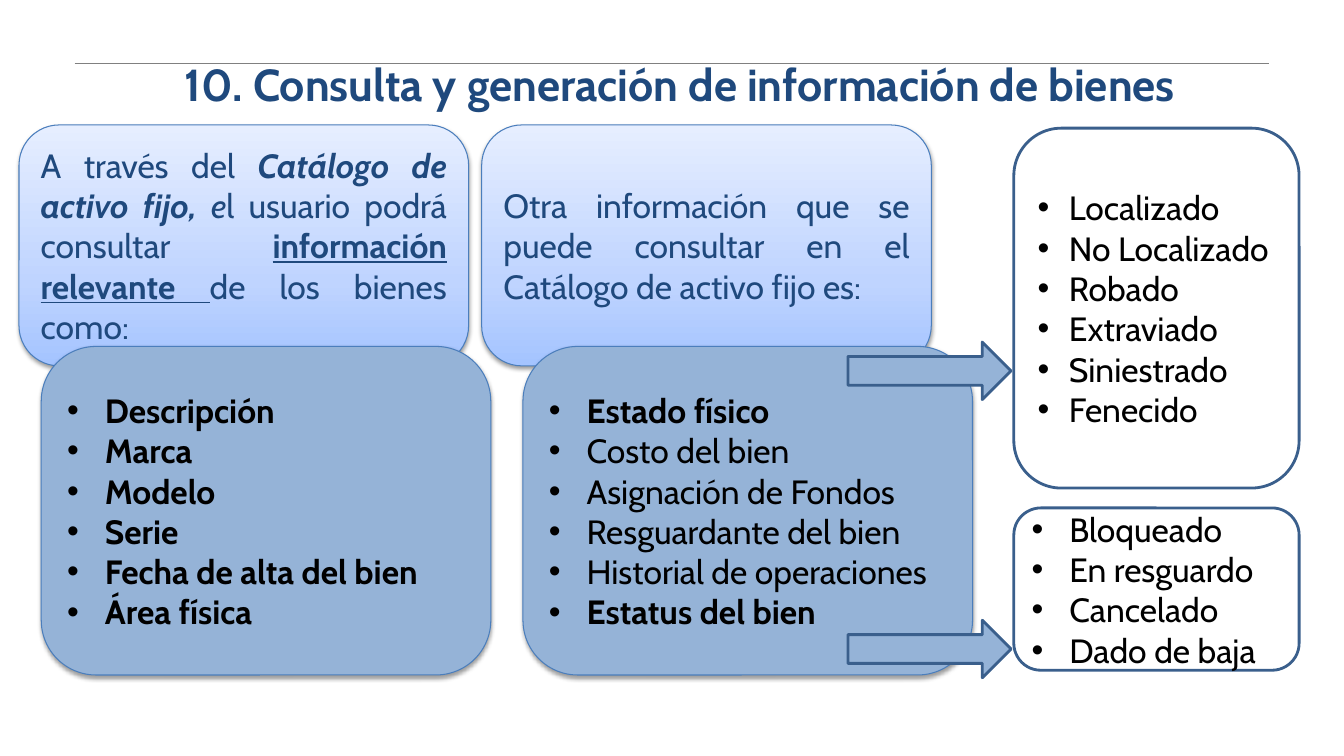
from copy import deepcopy

from pptx import Presentation
from pptx.dml.color import RGBColor
from pptx.enum.shapes import MSO_CONNECTOR, MSO_SHAPE
from pptx.enum.text import MSO_ANCHOR, PP_ALIGN
from pptx.oxml import parse_xml
from pptx.oxml.ns import nsdecls, qn
from pptx.oxml.xmlchemy import OxmlElement
from pptx.util import Cm, Pt

ROUND_RECT = MSO_SHAPE.ROUNDED_RECTANGLE
RIGHT_ARROW = MSO_SHAPE.RIGHT_ARROW
STRAIGHT = MSO_CONNECTOR.STRAIGHT
MIDDLE = MSO_ANCHOR.MIDDLE
LEFT, CENTER, JUSTIFY = PP_ALIGN.LEFT, PP_ALIGN.CENTER, PP_ALIGN.JUSTIFY

NAVY = RGBColor(0x1F, 0x49, 0x7D)
BLACK = RGBColor(0, 0, 0)
GRAY = RGBColor(0x80, 0x80, 0x80)
STEEL = RGBColor(0x95, 0xB3, 0xD7)
EDGE = RGBColor(0x4B, 0x7E, 0xBC)
DARK_EDGE = RGBColor(0x3A, 0x5F, 0x8C)
INTRO_STOPS = [(0, RGBColor(0xA4, 0xC4, 0xFF)),
               (0.35, RGBColor(0xBF, 0xD4, 0xFF)),
               (1, RGBColor(0xE6, 0xEE, 0xFF))]
FONT = "Cabin"

COLUMN_W = 11.33
INTRO_H = 6.07
LIST_H = 8.28
LIST_DROP = 5.58
STATUS_W = 7.19
ARROW_W, ARROW_H = 4.11, 1.45
ARROW_REACH = 4.18

INTRO_1 = [("A través del ", ""), ("Catálogo de activo fijo, ", "bi"), ("e", "i"),
           ("l usuario podrá consultar ", ""), ("información relevante ", "bu"),
           ("de los bienes como:", "")]
INTRO_2 = [("Otra información que se puede consultar en el Catálogo de activo fijo es:", "")]
FIELDS_1 = [("Descripción", "b"), ("Marca", "b"), ("Modelo", "b"), ("Serie", "b"),
            ("Fecha de alta del bien", "b"), ("Área física", "b")]
FIELDS_2 = [("Estado físico", "b"), ("Costo del bien", ""), ("Asignación de Fondos", ""),
            ("Resguardante del bien", ""), ("Historial de operaciones", ""),
            ("Estatus del bien", "b")]
CONDITIONS = ["Localizado", "No Localizado", "Robado", "Extraviado", "Siniestrado", "Fenecido"]
STATUSES = ["Bloqueado", "En resguardo", "Cancelado", "Dado de baja"]


def add_run(p, text, style, color, size=24):
    r = p.add_run()
    r.text = text
    r.font.name, r.font.size = FONT, Pt(size)
    r.font.color.rgb = color
    r.font.bold, r.font.italic, r.font.underline = (k in style for k in "biu")


def add_bullets(sp, items, align, indent):
    tf = sp.text_frame
    for i, (text, style) in enumerate(items):
        p = tf.paragraphs[0] if i == 0 else tf.add_paragraph()
        p.alignment = align
        pPr = p._p.get_or_add_pPr()
        pPr.set("marL", str(Cm(indent)))
        pPr.set("indent", str(-Cm(indent)))
        bullet_font = OxmlElement("a:buFont")
        bullet_font.set("typeface", "Arial")
        bullet = OxmlElement("a:buChar")
        bullet.set("char", "•")
        pPr.extend([bullet_font, bullet])
        add_run(p, text, style, BLACK)


def add_box(s, kind, box, edge, width, fill=None):
    sp = s.shapes.add_shape(kind, *map(Cm, box))
    sp.shadow.inherit = False
    sp.line.color.rgb = edge
    sp.line.width = Pt(width)
    if fill is None:
        sp.fill.background()
    else:
        sp.fill.solid()
        sp.fill.fore_color.rgb = fill
    sp.text_frame.word_wrap = True
    sp.text_frame.vertical_anchor = MIDDLE
    return sp


def add_shadow(sp):
    sp._element.spPr.find(qn("a:effectLst")).append(parse_xml(
        f'<a:outerShdw {nsdecls("a")} blurRad="40000" dist="20000" dir="5400000" '
        'rotWithShape="0"><a:srgbClr val="000000"><a:alpha val="38000"/>'
        '</a:srgbClr></a:outerShdw>'))


def add_gradient(sp):
    sp.fill.gradient()
    sp.fill.gradient_angle = 90
    stops = sp._element.spPr.find(".//" + qn("a:gsLst"))
    stops.append(deepcopy(stops[0]))
    for stop, (position, color) in zip(sp.fill.gradient_stops, INTRO_STOPS):
        stop.position = position
        stop.color.rgb = color


def add_header(s, left, top, width, height):
    rule = s.shapes.add_connector(STRAIGHT, Cm(left), Cm(top + 0.61),
                                  Cm(left + width - 0.43), Cm(top + 0.61))
    rule.line.color.rgb = GRAY
    rule.line.width = Pt(0.75)
    rule._element.spPr.append(OxmlElement("a:effectLst"))
    tf = s.shapes.add_textbox(*map(Cm, (left, top, width, height))).text_frame
    tf.word_wrap = True
    tf.vertical_anchor = MIDDLE
    p = tf.paragraphs[0]
    p.alignment = CENTER
    add_run(p, "10. Consulta y generación de información de bienes", "b", NAVY, 32)


def add_column(s, left, top, list_shift, intro, fields):
    sp = add_box(s, ROUND_RECT, (left, top, COLUMN_W, INTRO_H), EDGE, 0.75, STEEL)
    add_gradient(sp)
    add_shadow(sp)
    p = sp.text_frame.paragraphs[0]
    p.alignment = JUSTIFY
    for text, style in intro:
        add_run(p, text, style, NAVY)
    sp = add_box(s, ROUND_RECT, (left + list_shift, top + LIST_DROP, COLUMN_W, LIST_H),
                 EDGE, 0.75, STEEL)
    add_shadow(sp)
    add_bullets(sp, fields, LEFT, 0.95)


def add_status(s, left, top, height, items, indent, arrow_drop):
    sp = add_box(s, ROUND_RECT, (left, top, STATUS_W, height), DARK_EDGE, 2)
    add_bullets(sp, [(text, "") for text in items], JUSTIFY, indent)
    add_box(s, RIGHT_ARROW, (left - ARROW_REACH, top + arrow_drop, ARROW_W, ARROW_H),
            DARK_EDGE, 2, STEEL)


def main():
    prs = Presentation()
    prs.slide_width, prs.slide_height = Cm(33.87), Cm(19.05)
    s = prs.slides.add_slide(prs.slide_layouts[6])
    add_header(s, 1.88, 0.99, 30.53, 2.24)
    add_column(s, 0.48, 3.15, 0.56, INTRO_1, FIELDS_1)
    add_column(s, 12.14, 3.15, 1.04, INTRO_2, FIELDS_2)
    add_status(s, 25.55, 3.23, 9.07, CONDITIONS, 0.79, 5.39)
    add_status(s, 25.55, 12.8, 4.09, STATUSES, 0.95, 2.83)
    prs.save("out.pptx")


if __name__ == "__main__":
    main()
